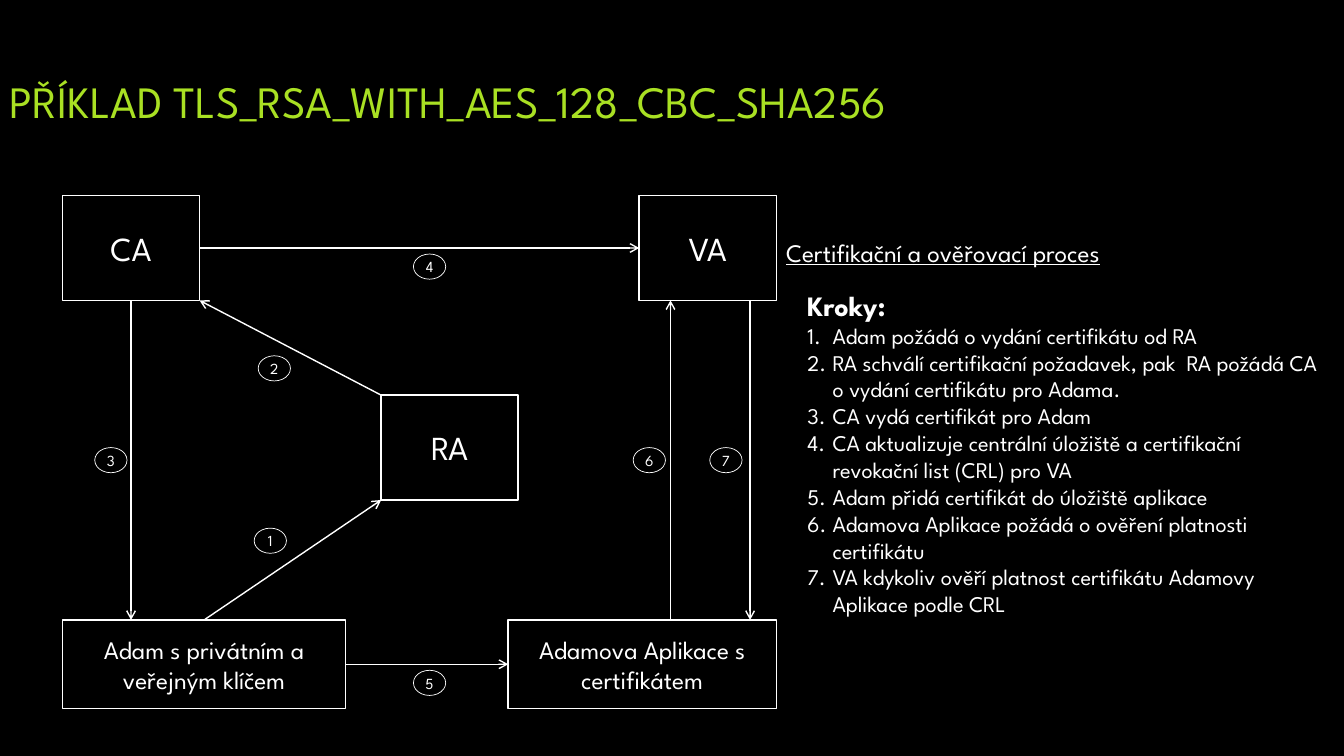
from lxml.etree import SubElement
from pptx import Presentation
from pptx.dml.color import RGBColor
from pptx.enum.shapes import MSO_CONNECTOR, MSO_SHAPE
from pptx.enum.text import MSO_ANCHOR, PP_ALIGN
from pptx.oxml.ns import qn
from pptx.util import Inches, Pt

COLORS = {"background": "000000", "white": "FFFFFF", "title": "A9E023"}
FONT = "League Spartan"

prs = Presentation()
prs.slide_width, prs.slide_height = Inches(13.33), Inches(7.5)
# Grid of 100 columns by 100 rows
COL, ROW = prs.slide_width / 100, prs.slide_height / 100
s = prs.slides.add_slide(prs.slide_layouts[6])
s.background.fill.solid()
s.background.fill.fore_color.rgb = RGBColor.from_string(COLORS["background"])


def cells(x, y, w, h):
    return int(x * COL), int(y * ROW), int(w * COL), int(h * ROW)


def add_text(text, at, size, shape=None, line=1, color="white", bold=False,
             underline=False, anchor=MSO_ANCHOR.MIDDLE, inset=0.1):
    """Put text in a text box, or in an outlined shape when one is named."""
    if shape is None:
        sp = s.shapes.add_textbox(*cells(*at))
    else:
        sp = s.shapes.add_shape(shape, *cells(*at))
        sp.shadow.inherit = False
        sp.fill.background()
        sp.line.color.rgb = RGBColor.from_string(COLORS["white"])
        sp.line.width = Pt(line)
    tf = sp.text_frame
    tf.word_wrap = True
    tf.vertical_anchor = anchor
    tf.margin_left = tf.margin_right = Inches(inset)
    tf.margin_top = tf.margin_bottom = Inches(inset / 2)
    p = tf.paragraphs[0]
    p.alignment = PP_ALIGN.CENTER if shape else PP_ALIGN.LEFT
    r = p.add_run()
    r.text = text
    r.font.name, r.font.size = FONT, Pt(size)
    r.font.bold, r.font.underline = bold, underline
    r.font.color.rgb = RGBColor.from_string(COLORS[color])
    return sp


# Title
add_text("PŘÍKLAD TLS_RSA_WITH_AES_128_CBC_SHA256", (0, 8.93, 100, 8.67), 32,
         color="title")

# Authorities and parties
AUTH_W, AUTH_H = 10.2, 13.87
CA_X, RA_X, VA_X = 4.65, 28.36, 47.56
TOP, RA_Y, BOTTOM = 25.87, 52.27, 82
AUTH_END = TOP + AUTH_H
boxes = {}
for name, text, at, size in [
    ("CA", "CA", (CA_X, TOP, AUTH_W, AUTH_H), 24),
    ("VA", "VA", (VA_X, TOP, AUTH_W, AUTH_H), 24),
    ("RA", "RA", (RA_X, RA_Y, AUTH_W, AUTH_H), 24),
    ("Adam", "Adam s privátním a veřejným klíčem", (CA_X, BOTTOM, 21.08, 11.73), 18),
    ("App", "Adamova Aplikace s certifikátem", (37.81, BOTTOM, 19.95, 11.73), 18),
]:
    boxes[name] = add_text(text, at, size, MSO_SHAPE.RECTANGLE)

# Arrows: an end is a point on the grid or a (box, side) joint
CA_MID = CA_X + AUTH_W / 2
for start, end in [
    (("Adam", 0), (RA_X, RA_Y + AUTH_H)),
    ((RA_X, RA_Y), (CA_X + AUTH_W, AUTH_END)),
    (("CA", 2), (CA_MID, BOTTOM)),
    (("CA", 3), ("VA", 1)),
    (("Adam", 3), ("App", 1)),
    ((49.89, BOTTOM), (49.89, AUTH_END)),
    ((55.81, AUTH_END), (55.81, BOTTOM)),
]:
    points = [(0, 0) if e[0] in boxes else e for e in (start, end)]
    arrow = s.shapes.add_connector(
        MSO_CONNECTOR.STRAIGHT,
        *[int(v) for x, y in points for v in (x * COL, y * ROW)])
    if start[0] in boxes:
        arrow.begin_connect(boxes[start[0]], start[1])
    if end[0] in boxes:
        arrow.end_connect(boxes[end[0]], end[1])
    arrow.line.color.rgb = RGBColor.from_string(COLORS["white"])
    arrow.line.width = Pt(1)
    SubElement(arrow.line._get_or_add_ln(), qn("a:tailEnd"), type="arrow")
    SubElement(arrow._element.spPr, qn("a:effectLst"))

# Step numbers, placed by their centres
MARK_W, MARK_H = 2.4, 3.33
centres = [(20.11, 71.53), (20.41, 48.73), (8.25, 60.87), (31.96, 35.27),
           (31.96, 90.33), (48.31, 60.87), (54.01, 60.87)]
for number, (x, y) in enumerate(centres, 1):
    add_text(str(number), (x - MARK_W / 2, y - MARK_H / 2, MARK_W, MARK_H), 11,
             MSO_SHAPE.OVAL, line=0.5, inset=0)

# Process heading and numbered steps
add_text("Certifikační a ověřovací proces", (57.76, 30.8, 35.1, 5.33), 18,
         underline=True, anchor=MSO_ANCHOR.TOP)
tf = add_text("Kroky:", (59.34, 37.47, 39.6, 47.6), 20, bold=True,
              anchor=MSO_ANCHOR.TOP).text_frame
for step in [
    "Adam požádá o vydání certifikátu od RA",
    "RA schválí certifikační požadavek, pak  RA požádá CA o vydání certifikátu pro Adama.",
    "CA vydá certifikát pro Adam",
    "CA aktualizuje centrální úložiště a certifikační revokační list (CRL) pro VA",
    "Adam přidá certifikát do úložiště aplikace",
    "Adamova Aplikace požádá o ověření platnosti certifikátu",
    "VA kdykoliv ověří platnost certifikátu Adamovy Aplikace podle CRL",
]:
    p = tf.add_paragraph()
    pPr = p._p.get_or_add_pPr()
    pPr.set("marL", str(Inches(0.25)))
    pPr.set("indent", str(-Inches(0.25)))
    SubElement(pPr, qn("a:buAutoNum"), type="arabicPeriod")
    r = p.add_run()
    r.text = step
    r.font.name, r.font.size = FONT, Pt(16)
    r.font.color.rgb = RGBColor.from_string(COLORS["white"])

prs.save("out.pptx")
